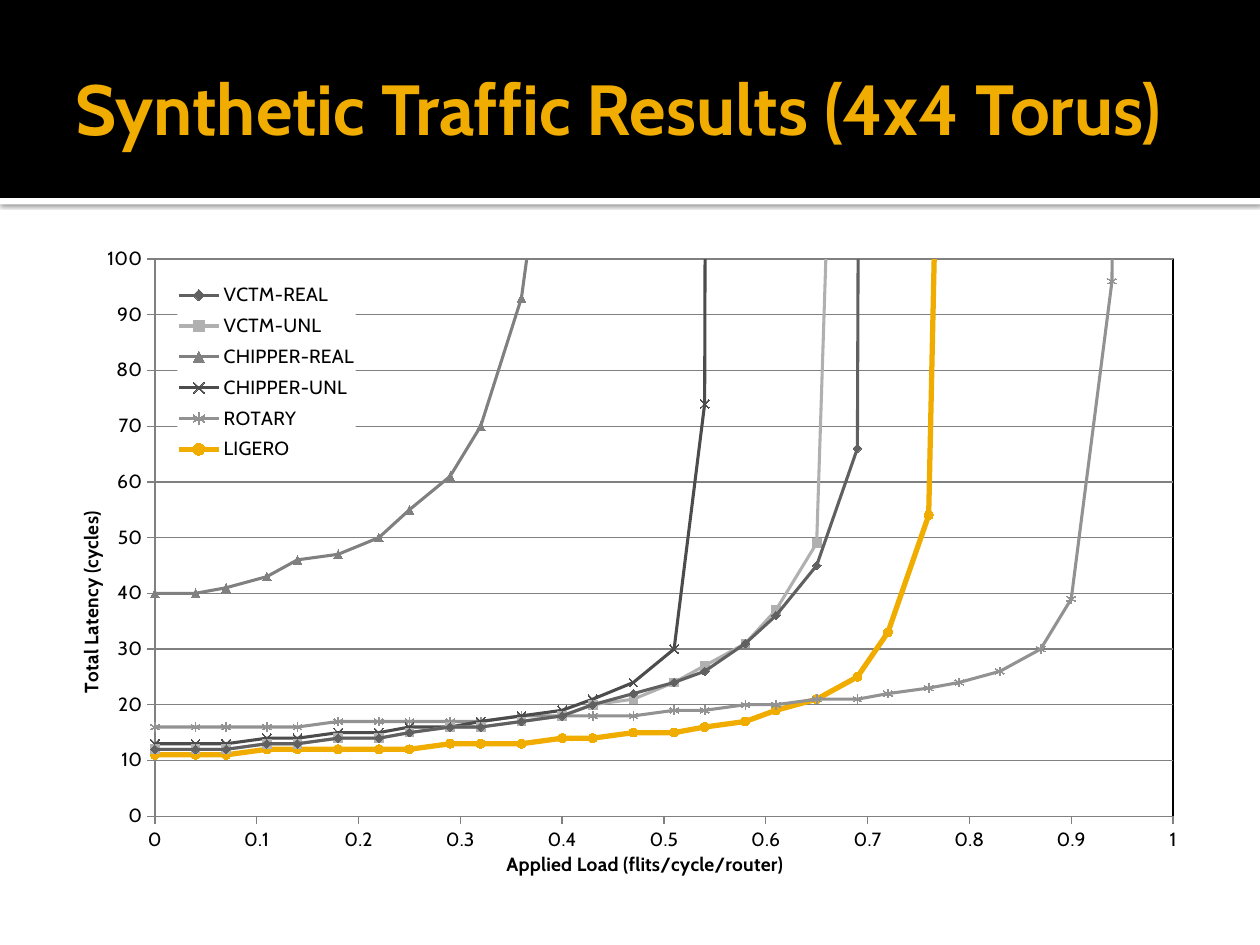
from lxml import etree
from pptx import Presentation
from pptx.chart.data import XyChartData
from pptx.dml.color import RGBColor
from pptx.enum.chart import XL_CHART_TYPE as ChartType
from pptx.enum.chart import XL_LEGEND_POSITION as LegendPosition
from pptx.enum.chart import XL_MARKER_STYLE as Marker
from pptx.enum.chart import XL_TICK_MARK as TickMark
from pptx.enum.shapes import MSO_SHAPE as Shape
from pptx.enum.text import MSO_ANCHOR as Anchor
from pptx.oxml import parse_xml
from pptx.oxml.ns import nsdecls, qn
from pptx.util import Cm, Pt

BLACK = RGBColor(0x00, 0x00, 0x00)
WHITE = RGBColor(0xFF, 0xFF, 0xFF)
GOLD = RGBColor(0xF0, 0xAD, 0x00)
GRID_GRAY = RGBColor(0x80, 0x80, 0x80)
SLATE = RGBColor(0x60, 0x60, 0x60)
SILVER = RGBColor(0xB0, 0xB0, 0xB0)
CHARCOAL = RGBColor(0x4C, 0x4C, 0x4C)
ASH = RGBColor(0x92, 0x92, 0x92)

LOAD_STEP = 0.0361

SERIES = [
    ("VCTM-REAL", SLATE, 1.75, Marker.DIAMOND,
     [12, 12, 12, 13, 13, 14, 14, 15, 16, 16, 17, 18, 20, 22, 24, 26, 31, 36, 45, 66,
      1584, 4571, 6102, 8648, 10005, 11671, 13100, 14547]),
    ("VCTM-UNL", SILVER, 1.75, Marker.SQUARE,
     [12, 12, 12, 13, 13, 14, 14, 15, 16, 16, 17, 18, 20, 21, 24, 27, 31, 37, 49, 276,
      2084, 4057, 5859, 7722, 9710, 11265, 12743, 14048]),
    ("CHIPPER-REAL", GRID_GRAY, 1.75, Marker.TRIANGLE,
     [40, 40, 41, 43, 46, 47, 50, 55, 61, 70, 93, 147, 2139, 5046, 8635, 10869, 13375,
      15257, 17689, 19463, 20346, 21987, 23332, 24618, 25341, 26490, 27355, 28021]),
    ("CHIPPER-UNL", CHARCOAL, 1.75, Marker.X,
     [13, 13, 13, 14, 14, 15, 15, 16, 16, 17, 18, 19, 21, 24, 30, 74, 2617, 5147, 7746,
      9917, 12032, 13704, 15478, 16999, 18409, 19685, 20867, 21903]),
    ("ROTARY", ASH, 1.75, Marker.STAR,
     [16, 16, 16, 16, 16, 17, 17, 17, 17, 17, 18, 18, 18, 18, 19, 19, 20, 20, 21, 21,
      22, 23, 24, 26, 30, 39, 96, 904]),
    ("LIGERO", GOLD, 3, Marker.CIRCLE,
     [11, 11, 11, 12, 12, 12, 12, 12, 13, 13, 13, 14, 14, 15, 15, 16, 17, 19, 21, 25,
      33, 54, 310, 1897, 3788, 5726, 7376, 8877]),
]


def manual_layout(x, y, width=None, height=None, inner=False):
    layout = parse_xml(f"<c:layout {nsdecls('c')}><c:manualLayout/></c:layout>")
    settings = [("layoutTarget", "inner" if inner else None), ("xMode", "edge"),
                ("yMode", "edge"), ("x", x), ("y", y), ("w", width), ("h", height)]
    for tag, value in settings:
        if value is not None:
            etree.SubElement(layout[0], qn(f"c:{tag}")).set("val", str(value))
    return layout


def place(element, layout):
    for previous in element.findall(qn("c:layout")):
        element.remove(previous)
    overlay = element.find(qn("c:overlay"))
    if overlay is None:
        element.insert(0, layout)
    else:
        overlay.addprevious(layout)


class SlideBuilder:
    font_name = "Cabin"

    def __init__(self, slide):
        self.slide = slide

    def band(self, top, height, color, shadow=False):
        shape = self.slide.shapes.add_shape(Shape.RECTANGLE, 0, Cm(top), Cm(25.4), Cm(height))
        shape.shadow.inherit = False
        shape.fill.solid()
        shape.fill.fore_color.rgb = color
        shape.line.fill.background()
        if shadow:
            effects = shape._element.spPr.find(qn("a:effectLst"))
            effects.append(parse_xml(
                f'<a:outerShdw {nsdecls("a")} blurRad="{Pt(2.5)}" dist="{Pt(0.8)}" dir="5400000">'
                '<a:srgbClr val="000000"><a:alpha val="60000"/></a:srgbClr></a:outerShdw>'))

    def title(self, text):
        box = self.slide.shapes.add_textbox(Cm(1.27), Cm(0.43), Cm(22.86), Cm(3.48))
        frame = box.text_frame
        frame.word_wrap = True
        frame.vertical_anchor = Anchor.MIDDLE
        frame.margin_left = Cm(0.25)
        frame.margin_right = frame.margin_top = frame.margin_bottom = Cm(0.13)
        paragraph = frame.paragraphs[0]
        paragraph.text = text
        font = paragraph.font
        font.name, font.size, font.bold = self.font_name, Pt(40.5), True
        font.color.rgb = GOLD

    def scatter_chart(self, series_rows):
        data = XyChartData()
        for name, _, _, _, latencies in series_rows:
            series = data.add_series(name)
            for index, latency in enumerate(latencies):
                series.add_data_point(round(index * LOAD_STEP, 2), latency)
        chart = self.slide.shapes.add_chart(
            ChartType.XY_SCATTER_LINES, Cm(1.27), Cm(4.93), Cm(22.86), Cm(12.85), data).chart
        chart.has_title = False
        chart.font.name, chart.font.size = self.font_name, Pt(11)
        chart.font.color.rgb = BLACK
        plot = chart.plots[0]
        plot.vary_by_categories = False
        for series, (_, color, width, marker, _) in zip(plot.series, series_rows):
            self.style_series(series, color, width, marker)
        self.axis(chart.category_axis, "Applied Load (flits/cycle/router)", 1, 0.1, (0.388, 0.955))
        self.axis(chart.value_axis, "Total Latency (cycles)", 100, 10, (0.01, 0.42))
        chart.value_axis.has_major_gridlines = True
        grid = chart.value_axis.major_gridlines.format.line
        grid.color.rgb, grid.width = GRID_GRAY, Pt(0.75)
        self.legend(chart)
        plot_area = chart._chartSpace.chart.plotArea
        place(plot_area, manual_layout(0.081, 0.023, 0.898, 0.883, inner=True))
        plot_area.append(parse_xml(
            f'<c:spPr {nsdecls("c", "a")}><a:noFill/><a:ln w="{Pt(0.75)}"><a:solidFill>'
            '<a:srgbClr val="000000"/></a:solidFill></a:ln></c:spPr>'))

    def style_series(self, series, color, width, marker):
        line = series.format.line
        line.color.rgb, line.width = color, Pt(width)
        series.marker.style, series.marker.size = marker, 5
        marker_format = series.marker.format
        marker_format.fill.solid()
        marker_format.fill.fore_color.rgb = color
        marker_format.line.color.rgb = color

    def axis(self, axis, text, maximum, unit, title_position):
        axis.minimum_scale, axis.maximum_scale, axis.major_unit = 0, maximum, unit
        axis.has_major_gridlines = False
        axis.major_tick_mark, axis.minor_tick_mark = TickMark.OUTSIDE, TickMark.NONE
        axis.tick_labels.number_format = "General"
        axis.tick_labels.number_format_is_linked = False
        axis.format.line.color.rgb = GRID_GRAY
        axis.format.line.width = Pt(0.75)
        paragraph = axis.axis_title.text_frame.paragraphs[0]
        paragraph.text = text
        font = paragraph.font
        font.name, font.size, font.bold = self.font_name, Pt(11), True
        font.color.rgb = BLACK
        place(axis.axis_title._element, manual_layout(*title_position))

    def legend(self, chart):
        chart.has_legend = True
        chart.legend.position = LegendPosition.LEFT
        chart.legend.include_in_layout = True
        element = chart.legend._element
        place(element, manual_layout(0.101, 0.05, 0.157, 0.305))
        element.find(qn("c:overlay")).addnext(parse_xml(
            f'<c:spPr {nsdecls("c", "a")}><a:solidFill><a:srgbClr val="{WHITE}"/>'
            '</a:solidFill><a:ln><a:noFill/></a:ln></c:spPr>'))


def main():
    presentation = Presentation()
    presentation.slide_width, presentation.slide_height = Cm(25.4), Cm(19.05)
    builder = SlideBuilder(presentation.slides.add_slide(presentation.slide_layouts[6]))
    builder.band(3.99, 0.13, WHITE, shadow=True)
    builder.band(0, 3.99, BLACK)
    builder.title("Synthetic Traffic Results (4x4 Torus)")
    builder.scatter_chart(SERIES)
    presentation.save("out.pptx")


if __name__ == "__main__":
    main()
